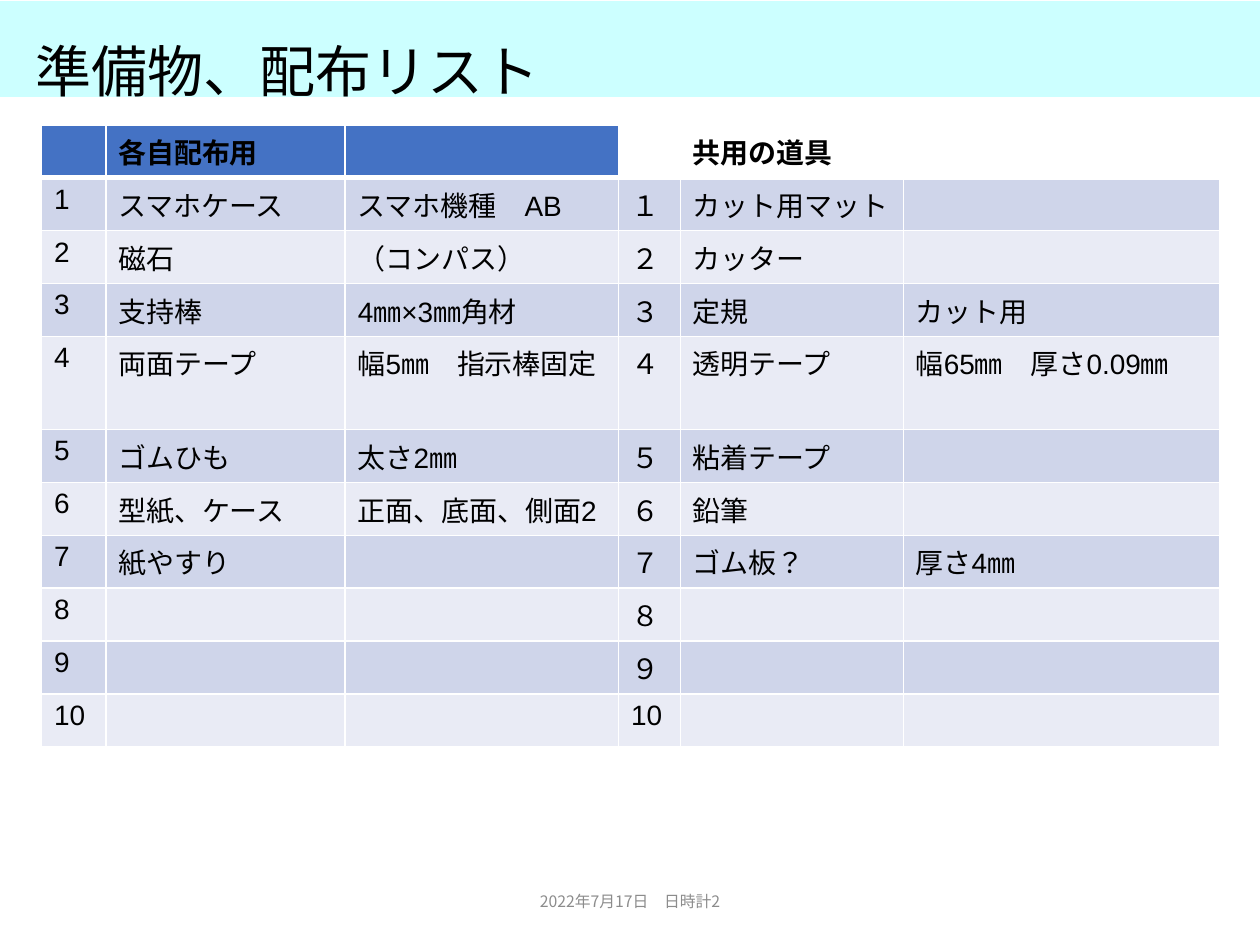
from lxml import etree
from pptx import Presentation
from pptx import util as u
from pptx.dml.color import RGBColor
from pptx.enum import lang, shapes, text
from pptx.oxml.ns import qn

WIDTH, HEIGHT = 10, 7.5
AQUA = RGBColor(0xCC, 0xFF, 0xFF)
BLUE = RGBColor(0x44, 0x72, 0xC4)
BAND_DARK = RGBColor(0xCF, 0xD5, 0xEA)
BAND_LIGHT = RGBColor(0xE9, 0xEB, 0xF5)
WHITE = RGBColor(0xFF, 0xFF, 0xFF)
BLACK = RGBColor(0, 0, 0)
GREY = RGBColor(0x8C, 0x8C, 0x8C)
JP_FONT = "Noto Sans CJK JP"

JAPANESE = {"language_id": lang.MSO_LANGUAGE_ID.JAPANESE}
TITLE_FONT = {"size": u.Pt(32), "name": JP_FONT, **JAPANESE}
FOOTER_FONT = {"size": u.Pt(9), "name": JP_FONT, **JAPANESE}
BODY_FONT = {"size": u.Pt(16), "name": "Arial", "bold": False, **JAPANESE}
HEAD_FONT = {**BODY_FONT, "bold": True}

COLUMNS = [0.51, 1.9, 2.17, 0.49, 1.77, 2.51]
ROW, TWO_LINE_ROW = 0.42, 0.74
TWO_LINE_INDEX = 4
HEADER = ["", "各自配布用", "", "", "共用の道具", ""]
HANDOUTS = [
    ("スマホケース", "スマホ機種　AB"),
    ("磁石", "（コンパス）"),
    ("支持棒", "4㎜×3㎜角材"),
    ("両面テープ", "幅5㎜　指示棒固定"),
    ("ゴムひも", "太さ2㎜"),
    ("型紙、ケース", "正面、底面、側面2"),
    ("紙やすり", ""),
] + [("", "")] * 3
SHARED_TOOLS = [
    ("カット用マット", ""),
    ("カッター", ""),
    ("定規", "カット用"),
    ("透明テープ", "幅65㎜　厚さ0.09㎜"),
    ("粘着テープ", ""),
    ("鉛筆", ""),
    ("ゴム板？", "厚さ4㎜"),
] + [("", "")] * 3
WIDE_NUMBERS = [*"１２３４５６７８９", "10"]


def inches(*values):
    return [u.Inches(v) for v in values]


def write(p, words, font, color=BLACK):
    """Add a run with the same look for Latin and Japanese letters."""
    r = p.add_run()
    r.text = words
    for key, value in font.items():
        setattr(r.font, key, value)
    r.font.color.rgb = color
    etree.SubElement(r.font._element, qn("a:ea"), typeface=JP_FONT)


def add_text(slide, box, words, font, color, frame_format, paragraph_format):
    tf = slide.shapes.add_textbox(*inches(*box)).text_frame
    p = tf.paragraphs[0]
    for target, values in ((tf, frame_format), (p, paragraph_format)):
        for key, value in values.items():
            setattr(target, key, value)
    write(p, words, font, color)


def add_heading(slide, box):
    left, top, width, height = box
    band = slide.shapes.add_shape(shapes.MSO_SHAPE.RECTANGLE, *inches(*box))
    band.shadow.inherit = False
    band.fill.solid()
    band.fill.fore_color.rgb = AQUA
    band.line.fill.background()
    title_box = (left + 0.18, top + 0.08, 0.85 * width, height + 0.03)
    add_text(slide, title_box, "準備物、配布リスト", TITLE_FONT, BLACK,
             {"word_wrap": True, "vertical_anchor": text.MSO_ANCHOR.BOTTOM},
             {"line_spacing": 0.9})


def add_footer(slide, box):
    add_text(slide, box, "2022年7月17日　日時計2", FOOTER_FONT, GREY,
             {"word_wrap": True, "vertical_anchor": text.MSO_ANCHOR.MIDDLE},
             {"alignment": text.PP_ALIGN.CENTER})


def set_borders(cell, widths):
    """Draw white cell borders; widths maps a side (L, R, T, B) to points."""
    props = cell._tc.get_or_add_tcPr()
    for i, (side, width) in enumerate(widths.items()):
        ln = etree.Element(qn(f"a:ln{side}"), w=str(u.Pt(width)))
        fill = etree.SubElement(ln, qn("a:solidFill"))
        etree.SubElement(fill, qn("a:srgbClr"), val=str(WHITE))
        props.insert(i, ln)


def cell_fill(row, col):
    if row == 0:
        return BLUE if col < 3 else WHITE
    return BAND_DARK if row % 2 else BAND_LIGHT


def add_checklist(slide, left, top):
    rows = [HEADER] + [
        [str(n), *handout, wide, *tool]
        for n, (handout, wide, tool)
        in enumerate(zip(HANDOUTS, WIDE_NUMBERS, SHARED_TOOLS), 1)]
    heights = [TWO_LINE_ROW if i == TWO_LINE_INDEX else ROW
               for i in range(len(rows))]
    box = inches(left, top, sum(COLUMNS), sum(heights))
    table = slide.shapes.add_table(len(rows), len(COLUMNS), *box).table
    for column, width in zip(table.columns, COLUMNS):
        column.width = u.Inches(width)
    for i, (values, height) in enumerate(zip(rows, heights)):
        table.rows[i].height = u.Inches(height)
        for j, words in enumerate(values):
            cell = table.cell(i, j)
            cell.fill.solid()
            cell.fill.fore_color.rgb = cell_fill(i, j)
            set_borders(cell, {"L": 1, "R": 1, "T": 3 if i == 1 else 1,
                               "B": 3 if i == 0 else 1})
            if words:
                write(cell.text_frame.paragraphs[0], words,
                      BODY_FONT if i else HEAD_FONT)


def main():
    prs = Presentation()
    prs.slide_width, prs.slide_height = inches(WIDTH, HEIGHT)
    slide = prs.slides.add_slide(prs.slide_layouts[6])
    add_heading(slide, (0, 0.01, WIDTH, 0.76))
    add_footer(slide, (3.31, 6.95, 3.38, 0.4))
    add_checklist(slide, 0.33, 0.99)
    prs.save("out.pptx")


if __name__ == "__main__":
    main()
